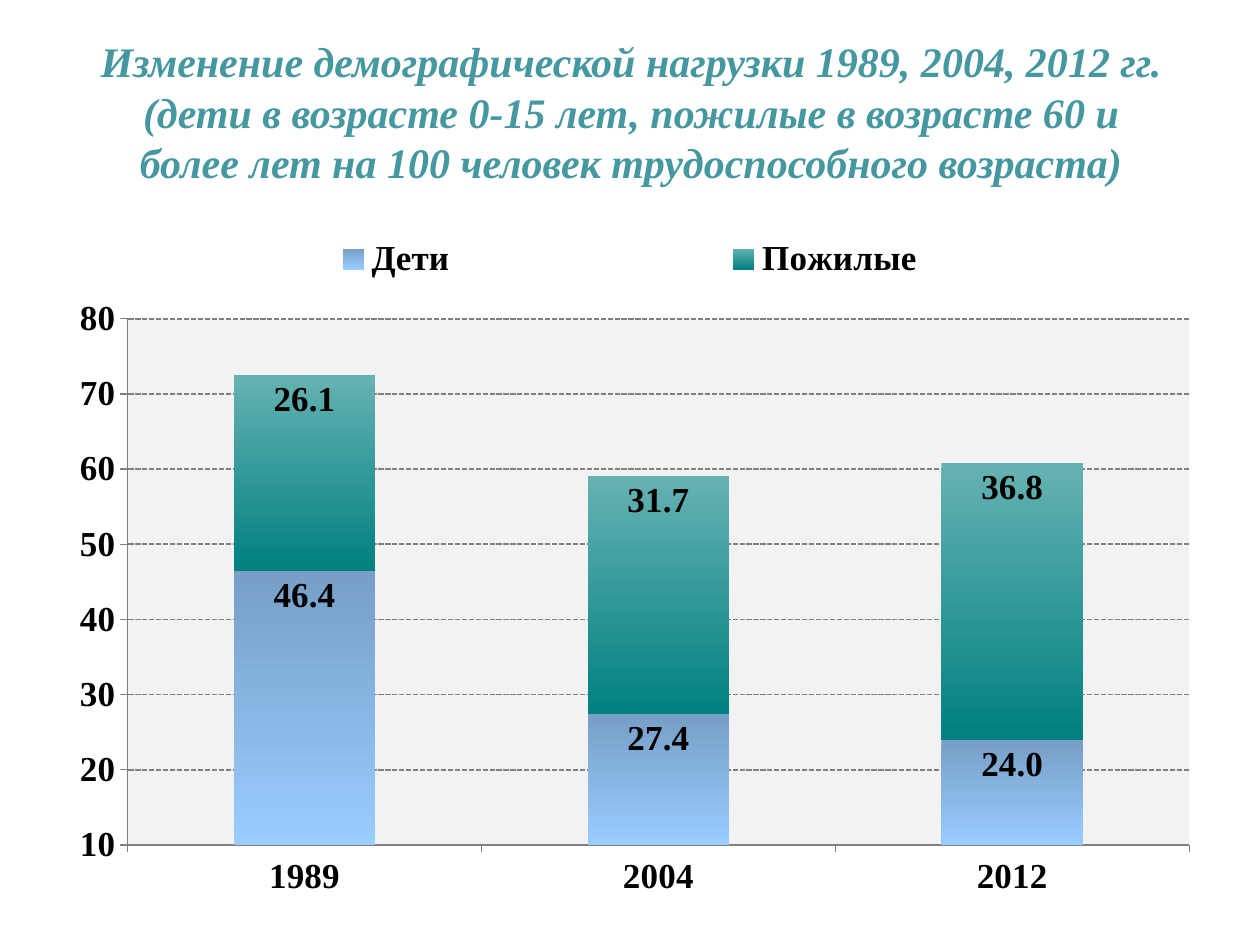
from lxml import etree
from pptx import Presentation
from pptx.chart.data import CategoryChartData
from pptx.dml.color import RGBColor
from pptx.enum.chart import XL_CHART_TYPE, XL_LABEL_POSITION, XL_LEGEND_POSITION, XL_TICK_MARK
from pptx.enum.dml import MSO_LINE
from pptx.enum.text import MSO_ANCHOR, MSO_AUTO_SIZE, PP_ALIGN
from pptx.oxml import parse_xml
from pptx.oxml.ns import nsdecls, qn
from pptx.util import Pt

STACKED = XL_CHART_TYPE.COLUMN_STACKED
INSIDE_END = XL_LABEL_POSITION.INSIDE_END
TOP = XL_LEGEND_POSITION.TOP
OUTSIDE = XL_TICK_MARK.OUTSIDE
DASH = MSO_LINE.SQUARE_DOT
CENTER, MIDDLE = PP_ALIGN.CENTER, MSO_ANCHOR.MIDDLE
NO_AUTOFIT = MSO_AUTO_SIZE.NONE
TITLE_ONLY = 5

COLORS = {
    "title": "4597A0",
    "text": "000000",
    "line": "808080",
    "plot": "F2F2F2",
    "children": ("779FC7", "99CCFF"),
    "elderly": ("66B2B2", "008080"),
}


class DemographySlide:
    """Holds the slide and the style shared by its title and chart."""

    font_name = "Times New Roman"

    def __init__(self, presentation):
        self.slide = presentation.slides.add_slide(presentation.slide_layouts[TITLE_ONLY])

    def style_font(self, font, size, color, italic=False):
        font.name, font.size = self.font_name, Pt(size)
        font.bold, font.italic = True, italic
        font.color.rgb = RGBColor.from_string(COLORS[color])

    def title(self, text, left, top, width, height):
        title = self.slide.shapes.title
        title.left, title.top, title.width, title.height = map(Pt, (left, top, width, height))
        frame = title.text_frame
        frame.text = text
        frame.word_wrap, frame.auto_size, frame.vertical_anchor = True, NO_AUTOFIT, MIDDLE
        paragraph = frame.paragraphs[0]
        paragraph.alignment = CENTER
        self.style_font(paragraph.font, 24, "title", italic=True)

    def layout(self, parent, index, x, y, w, h, inner=False):
        for old in parent.findall(qn("c:layout")):
            parent.remove(old)
        target = '<c:layoutTarget val="inner"/>' if inner else ""
        modes = '<c:xMode val="edge"/><c:yMode val="edge"/>'
        sizes = "".join(f'<c:{key} val="{value}"/>' for key, value in zip("xywh", (x, y, w, h)))
        parent.insert(index, parse_xml(
            f'<c:layout {nsdecls("c")}><c:manualLayout>{target}{modes}{sizes}'
            "</c:manualLayout></c:layout>"))

    def plot_area(self, chart):
        area = chart.plots[0]._element.getparent()
        self.layout(area, 0, 0.06, 0.16, 0.93, 0.75, inner=True)
        properties = etree.SubElement(area, qn("c:spPr"))
        fill = etree.SubElement(properties, qn("a:solidFill"))
        etree.SubElement(fill, qn("a:srgbClr"), val=COLORS["plot"])

    def line(self, line, width):
        line.color.rgb = RGBColor.from_string(COLORS["line"])
        line.width = Pt(width)

    def axes(self, chart, minimum, maximum, step):
        for axis in (chart.category_axis, chart.value_axis):
            axis.major_tick_mark = OUTSIDE
            self.line(axis.format.line, 0.75)
        values = chart.value_axis
        values.minimum_scale, values.maximum_scale, values.major_unit = minimum, maximum, step
        values.tick_labels.number_format = "0"
        values.tick_labels.number_format_is_linked = False
        values.has_major_gridlines = True
        grid = values.major_gridlines.format.line
        self.line(grid, 1)
        grid.dash_style = DASH

    def series(self, series, color):
        fill = series.format.fill
        fill.gradient()
        fill.gradient_angle = 270
        for stop, shade in zip(fill.gradient_stops, COLORS[color]):
            stop.color.rgb = RGBColor.from_string(shade)
        labels = series.data_labels
        labels.show_value, labels.position = True, INSIDE_END
        labels.number_format, labels.number_format_is_linked = "0.0", False
        self.style_font(labels.font, 20, "text")

    def chart(self, years, groups, left, top, width, height):
        data = CategoryChartData(number_format="0.0")
        data.categories = years
        for name, _, values in groups:
            data.add_series(name, values)
        chart = self.slide.shapes.add_chart(
            STACKED, Pt(left), Pt(top), Pt(width), Pt(height), data).chart
        self.style_font(chart.font, 20, "text")
        chart.has_title = False
        chart.has_legend = True
        chart.legend.position, chart.legend.include_in_layout = TOP, False
        self.layout(chart.legend._element, 1, 0.01, 0.04, 0.98, 0.07)
        plot = chart.plots[0]
        plot.vary_by_categories, plot.gap_width, plot.overlap = False, 150, 100
        self.axes(chart, 10, 80, 10)
        for series, (_, color, _) in zip(plot.series, groups):
            self.series(series, color)
        self.plot_area(chart)


def main():
    presentation = Presentation()
    presentation.slide_width, presentation.slide_height = Pt(720), Pt(540)
    slide = DemographySlide(presentation)
    slide.title(
        "Изменение демографической нагрузки 1989, 2004, 2012 гг. "
        "(дети в возрасте 0-15 лет, пожилые в возрасте 60 и более лет "
        "на 100 человек трудоспособного возраста)",
        44.6, 16.6, 632, 94.3)
    slide.chart(
        ("1989", "2004", "2012"),
        (("Дети", "children", (46.4, 27.4, 24.0)),
         ("Пожилые", "elderly", (26.1, 31.7, 36.8))),
        33.8, 118, 652.3, 401)
    presentation.save("out.pptx")


if __name__ == "__main__":
    main()
